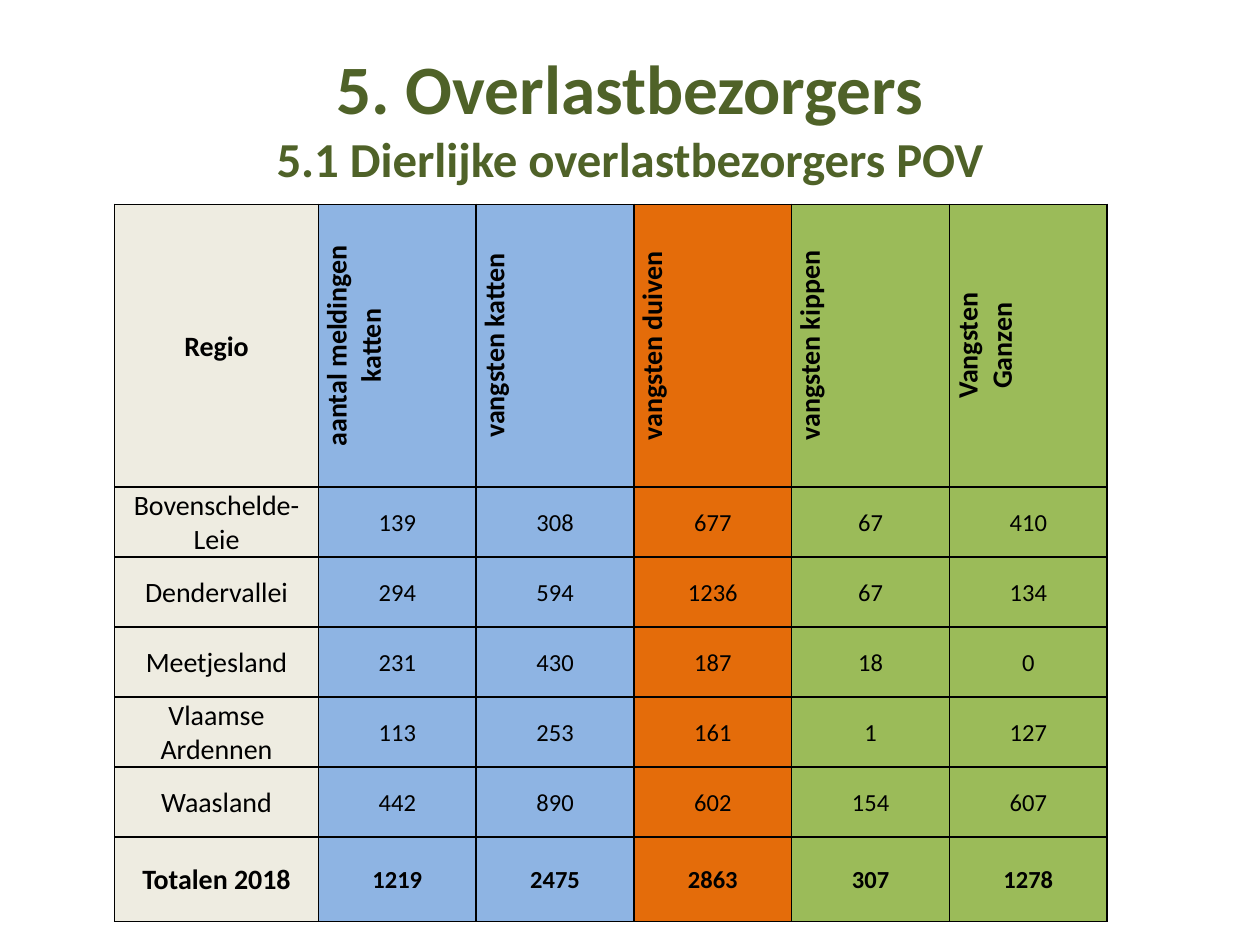
from dataclasses import dataclass

from lxml.etree import fromstring
from pptx import Presentation
from pptx.dml.color import RGBColor
from pptx.enum.text import MSO_ANCHOR, MSO_AUTO_SIZE, PP_ALIGN
from pptx.util import Cm, Pt


@dataclass(frozen=True)
class Theme:
    font: str = "Calibri"
    title: str = "4F6228"
    text: str = "000000"
    border: str = "000000"
    region: str = "EEECE1"
    cats: str = "8EB4E3"
    pigeons: str = "E46C0A"
    poultry: str = "9BBB59"
    title_size: float = 39.6
    subtitle_size: float = 27.9
    label_size: float = 16
    value_size: float = 14


theme = Theme()


def write(paragraph, text, *, size, color=theme.text, bold=False):
    paragraph.alignment = PP_ALIGN.CENTER
    run = paragraph.add_run()
    run.text = text
    run.font.name = theme.font
    run.font.size = Pt(size)
    run.font.bold = bold
    run.font.color.rgb = RGBColor.from_string(color)


def add_borders(cell):
    """Draw a 1 pt line on each side; the lines must come before the fill in the XML."""
    properties = cell._tc.get_or_add_tcPr()
    for position, side in enumerate(("lnL", "lnR", "lnT", "lnB")):
        line = fromstring(
            f'<a:{side} xmlns:a="http://schemas.openxmlformats.org/drawingml/2006/main" '
            f'w="{Pt(1)}"><a:solidFill><a:srgbClr val="{theme.border}"/></a:solidFill></a:{side}>'
        )
        properties.insert(position, line)


presentation = Presentation()
presentation.slide_width, presentation.slide_height = Cm(25.4), Cm(19.05)
slide = presentation.slides.add_slide(presentation.slide_layouts[5])

title = slide.shapes.title
title.left, title.top, title.width, title.height = Cm(1.27), Cm(0.76), Cm(22.86), Cm(3.18)
title_frame = title.text_frame
title_frame.auto_size = MSO_AUTO_SIZE.NONE
title_frame.word_wrap = True
title_frame.vertical_anchor = MSO_ANCHOR.MIDDLE
heading = title_frame.paragraphs[0]
write(heading, "5. Overlastbezorgers", size=theme.title_size, color=theme.title, bold=True)
heading.add_line_break()
write(heading, "5.1 Dierlijke overlastbezorgers POV",
      size=theme.subtitle_size, color=theme.title, bold=True)

rows = [
    ("Regio", "aantal meldingen katten", "vangsten katten", "vangsten duiven",
     "vangsten kippen", "Vangsten\nGanzen"),
    ("Bovenschelde-Leie", 139, 308, 677, 67, 410),
    ("Dendervallei", 294, 594, 1236, 67, 134),
    ("Meetjesland", 231, 430, 187, 18, 0),
    ("Vlaamse Ardennen", 113, 253, 161, 1, 127),
    ("Waasland", 442, 890, 602, 154, 607),
    ("Totalen 2018", 1219, 2475, 2863, 307, 1278),
]
column_fills = [theme.region, theme.cats, theme.cats, theme.pigeons, theme.poultry, theme.poultry]
column_widths = [4.11] + [3.18] * 5
row_heights = [3.58] + [1.41] * 5 + [1.71]

table = slide.shapes.add_table(
    len(rows), len(column_fills), Cm(2.31), Cm(4.12),
    Cm(sum(column_widths)), Cm(sum(row_heights)),
).table
table.first_row = table.horz_banding = False
for column, width in zip(table.columns, column_widths):
    column.width = Cm(width)
for row, height in zip(table.rows, row_heights):
    row.height = Cm(height)

last_row = len(rows) - 1
for row_index, values in enumerate(rows):
    for column_index, value in enumerate(values):
        cell = table.cell(row_index, column_index)
        cell.fill.solid()
        cell.fill.fore_color.rgb = RGBColor.from_string(column_fills[column_index])
        add_borders(cell)
        cell.vertical_anchor = MSO_ANCHOR.MIDDLE
        cell.margin_left = cell.margin_right = cell.margin_top = Cm(0.03)
        cell.margin_bottom = Cm(0)
        is_header = row_index == 0
        if is_header and column_index > 0:
            cell._tc.get_or_add_tcPr().set("vert", "vert270")
        is_label = is_header or column_index == 0
        for line_index, line in enumerate(str(value).split("\n")):
            frame = cell.text_frame
            paragraph = frame.add_paragraph() if line_index else frame.paragraphs[0]
            write(paragraph, line,
                  size=theme.label_size if is_label else theme.value_size,
                  bold=row_index in (0, last_row))

presentation.save("out.pptx")
